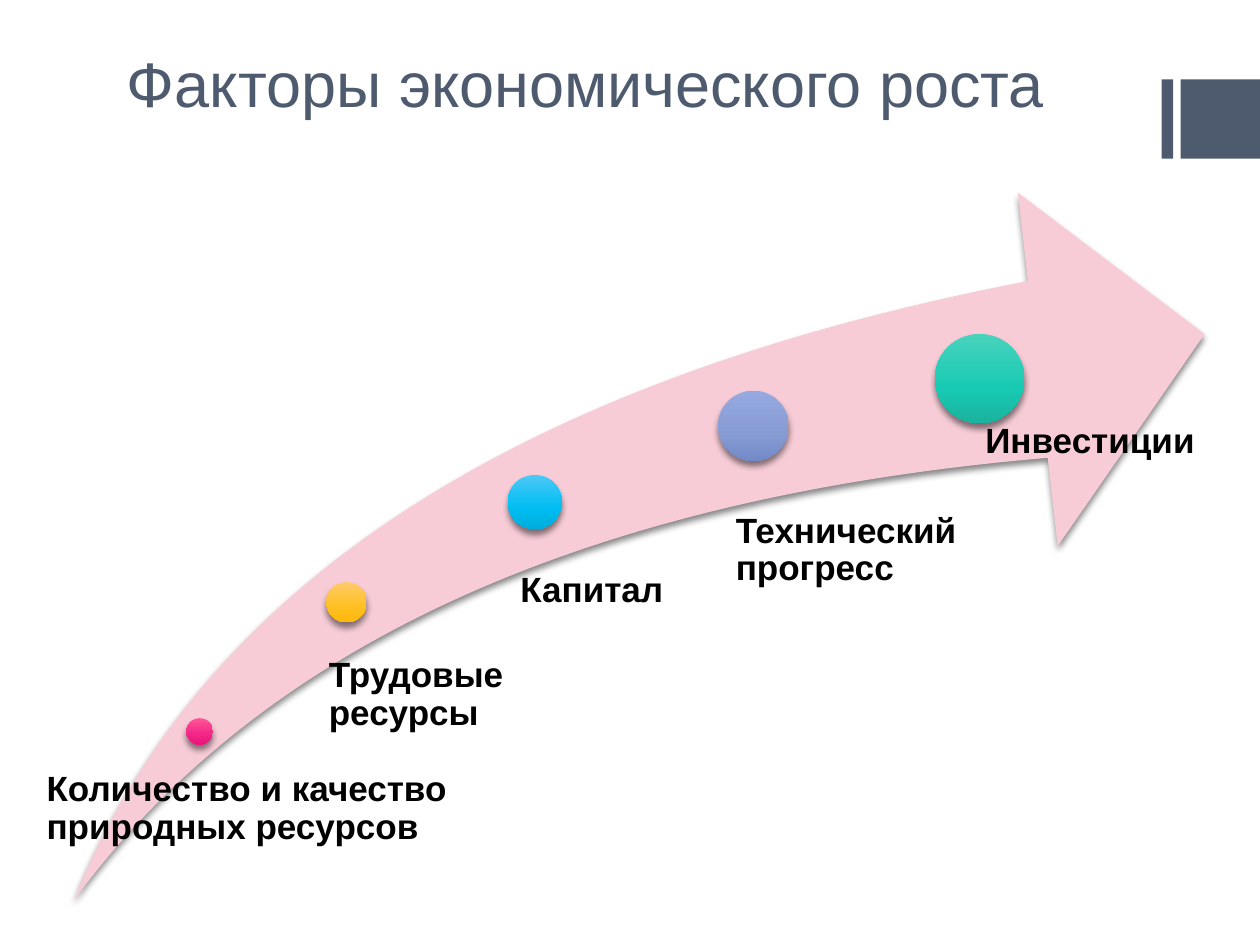
from pptx import Presentation
from pptx.dml.color import RGBColor
from pptx.enum.shapes import MSO_SHAPE
from pptx.enum.text import MSO_ANCHOR
from pptx.oxml import parse_xml
from pptx.oxml.ns import nsdecls
from pptx.util import Pt

SCALE = 9144
SLATE = RGBColor(0x4E, 0x5B, 0x6F)
PINK = RGBColor(0xF7, 0xCC, 0xD7)
BLACK = RGBColor(0, 0, 0)
ROSE = [RGBColor(0xFF, 0x57, 0x98), RGBColor(0xF2, 0x27, 0x87), RGBColor(0xEA, 0x15, 0x7A)]
GOLD = [RGBColor(0xFF, 0xCB, 0x6B), RGBColor(0xFF, 0xC0, 0x23), RGBColor(0xFE, 0xB8, 0x0A)]
SKY = [RGBColor(0x4D, 0xC8, 0xF7), RGBColor(0x00, 0xBE, 0xF2), RGBColor(0x00, 0xAD, 0xDC)]
LILAC = [RGBColor(0x95, 0xA9, 0xE0), RGBColor(0x87, 0x9C, 0xD3), RGBColor(0x73, 0x8A, 0xC8)]
TEAL = [RGBColor(0x49, 0xD3, 0xBD), RGBColor(0x18, 0xCA, 0xB3), RGBColor(0x1A, 0xB3, 0x9F)]

FACTORS = [
    ("Количество и качество природных ресурсов", ROSE, (89, 417, 21), (-33, 459, 382, 102), 11),
    ("Трудовые ресурсы", GOLD, (200, 309, 32), (185, 369, 204, 100), 17),
    ("Капитал", SKY, (344, 224, 43), (331, 301, 237, 63), 23),
    ("Технический прогресс", LILAC, (511, 157, 56), (496, 254, 246, 108), 29),
    ("Инвестиции", TEAL, (683, 112, 71), (685, 183, 246, 129), 38),
]


def px(*sizes):
    """Turn px lengths into EMU."""
    return [size * SCALE for size in sizes]


def write(slide, text, box, size=20, color=BLACK, bold=False, inset=(0, 0, 0, 0),
          anchor=MSO_ANCHOR.TOP, spacing=1.0):
    """Place one paragraph of text in a box."""
    frame = slide.shapes.add_textbox(*px(*box)).text_frame
    frame.word_wrap = True
    frame.vertical_anchor = anchor
    (frame.margin_left, frame.margin_top,
     frame.margin_right, frame.margin_bottom) = px(*inset)
    para = frame.paragraphs[0]
    para.line_spacing = spacing
    run = para.add_run()
    run.text = text
    run.font.name = "Arial"
    run.font.size = Pt(size)
    run.font.bold = bold
    run.font.color.rgb = color


def draw(slide, kind, box, color):
    """Place a plain shape without line or shadow."""
    shape = slide.shapes.add_shape(kind, *px(*box))
    shape.shadow.inherit = False
    shape.line.fill.background()
    shape.fill.solid()
    shape.fill.fore_color.rgb = color
    return shape


def shade(shape):
    """Cast a soft shadow below a shape."""
    shape._element.spPr.find("{*}effectLst").append(parse_xml(
        f'<a:outerShdw {nsdecls("a")} blurRad="{Pt(3.8)}" dist="{Pt(3)}" dir="5400000" '
        'algn="ctr" rotWithShape="0"><a:srgbClr val="000000"><a:alpha val="48000"/>'
        '</a:srgbClr></a:outerShdw>'))


def blend(shape, colors):
    """Fill a shape with a three-stop gradient from top to bottom."""
    stops = "".join(
        f'<a:gs pos="{spot * 1000}"><a:srgbClr val="{color}"/></a:gs>'
        for spot, color in zip((0, 60, 100), colors))
    props = shape._element.spPr
    props.replace(props.find("{*}solidFill"), parse_xml(
        f'<a:gradFill {nsdecls("a")} rotWithShape="1"><a:gsLst>{stops}</a:gsLst>'
        '<a:lin ang="5400000" scaled="0"/></a:gradFill>'))


def header(slide, box):
    """Draw the title and the two bars at the right edge."""
    left, top, width, height = box
    for start, wide in ((831, 9), (846, 63)):
        draw(slide, MSO_SHAPE.RECTANGLE, (left + start, top + 34, wide, 63), SLATE)
    write(slide, "Факторы экономического роста", (left, top, width, height),
          size=36, color=SLATE, inset=(10, 5, 10, 5), anchor=MSO_ANCHOR.BOTTOM)


def growth(slide, box):
    """Draw the rising arrow with its dots and labels."""
    left, top = box[:2]
    arrow = draw(slide, MSO_SHAPE.SWOOSH_ARROW, box, PINK)
    arrow.adjustments[0] = arrow.adjustments[1] = 0.25
    shade(arrow)
    for text, colors, (x, y, size), (across, down, width, height), inset in FACTORS:
        dot = draw(slide, MSO_SHAPE.OVAL, (left + x, top + y, size, size), colors[1])
        blend(dot, colors)
        shade(dot)
        write(slide, text, (left + across, top + down, width, height),
              bold=True, inset=(inset, 0, 0, 0), spacing=0.9)


def main():
    """Build and save the slide."""
    deck = Presentation()
    deck.slide_width, deck.slide_height = px(1000, 750)
    slide = deck.slides.add_slide(deck.slide_layouts[6])
    header(slide, (91, 29, 800, 71))
    growth(slide, (59, 153, 897, 561))
    deck.save("out.pptx")


if __name__ == "__main__":
    main()
